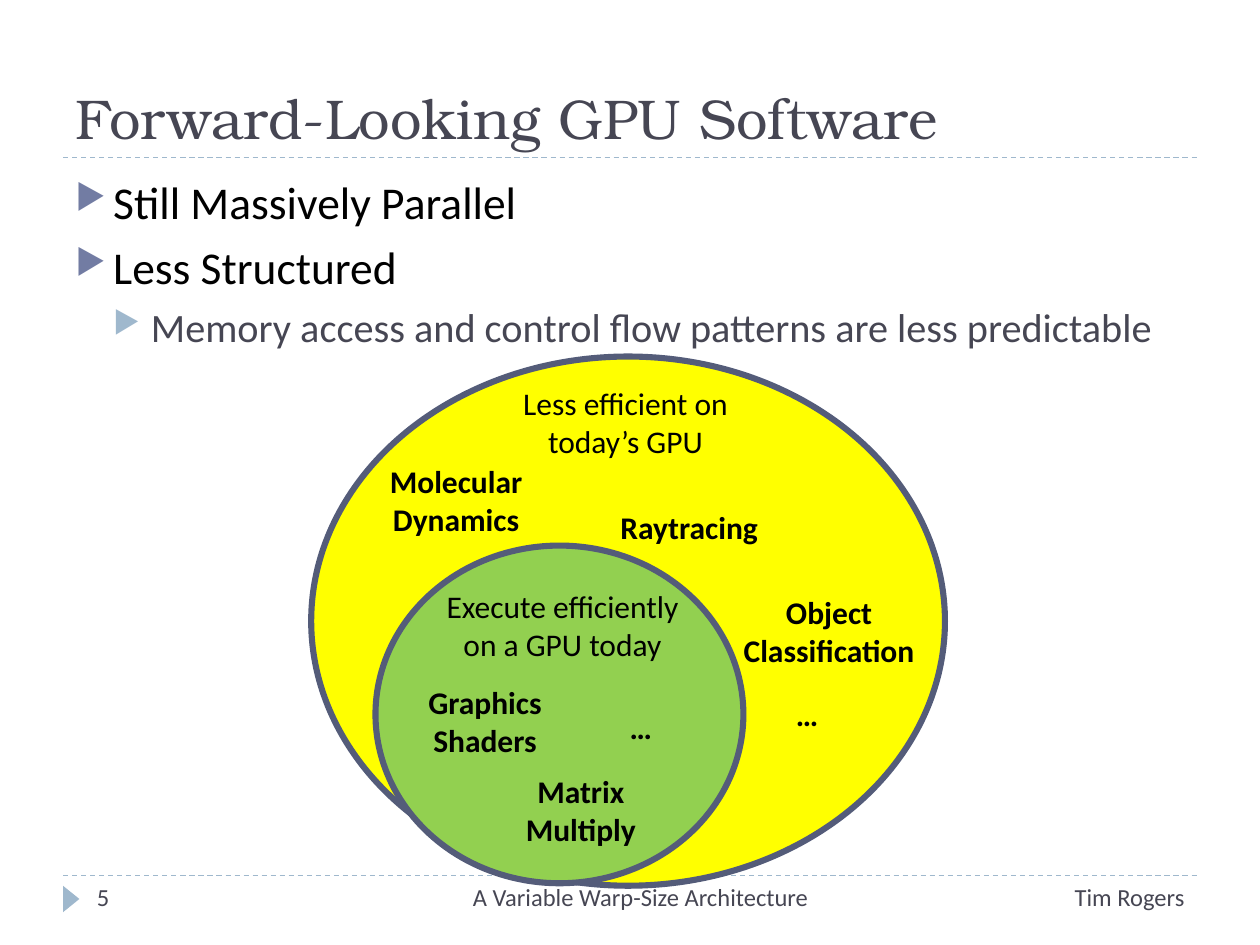
from lxml import etree
from pptx import Presentation
from pptx.dml.color import RGBColor
from pptx.enum.dml import MSO_LINE
from pptx.enum.shapes import MSO_CONNECTOR, MSO_SHAPE
from pptx.enum.text import MSO_ANCHOR, MSO_AUTO_SIZE, PP_ALIGN
from pptx.oxml.ns import qn
from pptx.util import Pt

LEFT, CENTER, RIGHT = PP_ALIGN.LEFT, PP_ALIGN.CENTER, PP_ALIGN.RIGHT
BOTTOM = MSO_ANCHOR.BOTTOM
NO_FIT = MSO_AUTO_SIZE.NONE
STRAIGHT = MSO_CONNECTOR.STRAIGHT
OVAL, TRIANGLE = MSO_SHAPE.OVAL, MSO_SHAPE.ISOSCELES_TRIANGLE
DASH = MSO_LINE.DASH

THEME = {
    "heading_font": "TeX Gyre Bonum", "body_font": "Calibri",
    "text": "000000", "muted": "464653", "accent": "727CA3", "pale": "9FB8CD",
    "outline": "545C79", "today": "92D050", "future": "FFFF00",
    "title_size": 32, "label_size": 18, "footer_size": 14,
    "bullets": [
        {"size": 26, "color": "text", "marker": "accent", "before": 6},
        {"size": 23, "color": "muted", "marker": "pale", "before": 5},
    ],
}

TITLE = "Forward-Looking GPU Software"
TITLE_BOX = (36, 12.24, 648, 77.76)
BULLETS = [
    (0, "Still Massively Parallel"),
    (0, "Less Structured"),
    (1, "Memory access and control flow patterns are less predictable"),
]
BULLETS_BOX = (36, 95.76, 648, 388.8)
BULLET_INDENT = 21.6
RULES_Y = (500.4, 90)
RULE_SPAN = (36, 684)
PAGE_MARKER_BOX = (33.12, 509.04, 15.12, 9.36)
WORKLOAD_SETS = [
    ("future", (177.84, 203.76, 362.16, 302.4)),
    ("today", (214.56, 311.76, 210.24, 192.96)),
]
LABELS = [
    ("Execute efficiently on a GPU today", False, (243.36, 331.92, 156.24, 51.12)),
    ("Graphics Shaders", True, (214.56, 386.64, 125.28, 51.12)),
    ("Matrix Multiply", True, (269.28, 437.76, 125.28, 51.12)),
    ("…", True, (323.28, 401.04, 85.68, 28.8)),
    ("Less efficient on today’s GPU", False, (279.36, 216, 156.24, 51.12)),
    ("Raytracing", True, (331.2, 286.56, 125.28, 28.8)),
    ("Molecular Dynamics", True, (198, 260.64, 125.28, 51.12)),
    ("Object Classification", True, (411.12, 335.52, 125.28, 51.12)),
    ("…", True, (424.8, 393.84, 72.72, 28.8)),
]
FOOTER_Y, FOOTER_HEIGHT = 500.4, 28.8
FOOTERS = [
    ("5", LEFT, 48.24, 156.24),
    ("Tim Rogers", RIGHT, 504, 180),
    ("A Variable Warp-Size Architecture", CENTER, 228.24, 275.76),
]


def rgb(name):
    return RGBColor.from_string(THEME[name])


def points(box):
    return [Pt(length) for length in box]


def format_paragraph(paragraph, size, color, font="body_font", bold=False, align=LEFT):
    paragraph.alignment = align
    paragraph.font.name = THEME[font]
    paragraph.font.size = Pt(size)
    paragraph.font.bold = bold
    paragraph.font.color.rgb = rgb(color)


def add_text(slide, text, box, size, color, **style):
    frame = slide.shapes.add_textbox(*points(box)).text_frame
    frame.word_wrap = True
    frame.text = text
    format_paragraph(frame.paragraphs[0], size, color, **style)


def add_filled(slide, kind, box, fill):
    shape = slide.shapes.add_shape(kind, *points(box))
    shape.shadow.inherit = False
    shape.fill.solid()
    shape.fill.fore_color.rgb = rgb(fill)
    shape.line.fill.background()
    return shape


def add_rule(slide, y):
    start, end = RULE_SPAN
    rule = slide.shapes.add_connector(STRAIGHT, Pt(start), Pt(y), Pt(end), Pt(y))
    rule.line.color.rgb = rgb("pale")
    rule.line.width = Pt(0.75)
    rule.line.dash_style = DASH
    etree.SubElement(rule._element.spPr, qn("a:effectLst"))


def add_marker(paragraph, level, color):
    properties = paragraph._p.get_or_add_pPr()
    properties.set("marL", str(Pt(BULLET_INDENT * (level + 1))))
    properties.set("indent", str(Pt(-BULLET_INDENT)))
    marker_color = etree.SubElement(properties, qn("a:buClr"))
    etree.SubElement(marker_color, qn("a:srgbClr"), val=THEME[color])
    etree.SubElement(properties, qn("a:buSzPct"), val="76000")
    etree.SubElement(properties, qn("a:buChar"), char="▶")


def add_title(slide):
    title = slide.shapes.title
    title.left, title.top, title.width, title.height = points(TITLE_BOX)
    frame = title.text_frame
    frame.text = TITLE
    frame.word_wrap = True
    frame.auto_size = NO_FIT
    frame.vertical_anchor = BOTTOM
    format_paragraph(frame.paragraphs[0], THEME["title_size"], "muted", "heading_font")


def add_bullets(slide):
    frame = slide.shapes.add_textbox(*points(BULLETS_BOX)).text_frame
    frame.word_wrap = True
    for index, (level, text) in enumerate(BULLETS):
        style = THEME["bullets"][level]
        paragraph = frame.add_paragraph() if index else frame.paragraphs[0]
        paragraph.text = text
        paragraph.level = level
        paragraph.space_before = Pt(style["before"])
        add_marker(paragraph, level, style["marker"])
        format_paragraph(paragraph, style["size"], style["color"])


def main():
    deck = Presentation()
    deck.slide_width, deck.slide_height = Pt(720), Pt(540)
    slide = deck.slides.add_slide(deck.slide_layouts[5])
    add_title(slide)
    for y in RULES_Y:
        add_rule(slide, y)
    add_filled(slide, TRIANGLE, PAGE_MARKER_BOX, "pale").rotation = 90
    add_bullets(slide)
    for fill, box in WORKLOAD_SETS:
        oval = add_filled(slide, OVAL, box, fill)
        oval.line.color.rgb = rgb("outline")
        oval.line.width = Pt(3.5)
    for text, bold, box in LABELS:
        add_text(slide, text, box, THEME["label_size"], "text", bold=bold, align=CENTER)
    for text, align, left, width in FOOTERS:
        box = (left, FOOTER_Y, width, FOOTER_HEIGHT)
        add_text(slide, text, box, THEME["footer_size"], "muted", align=align)
    deck.save("out.pptx")


if __name__ == "__main__":
    main()
